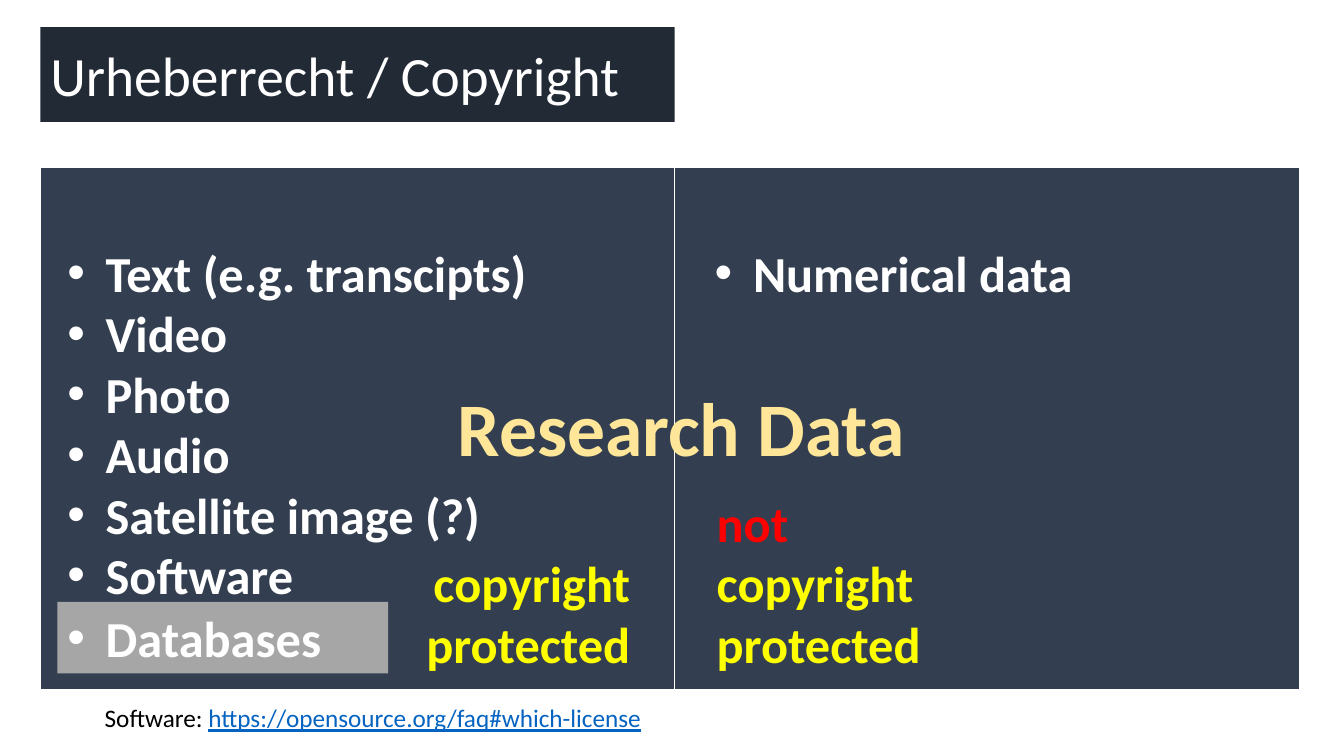
from lxml import etree
from pptx import Presentation
from pptx.dml.color import RGBColor
from pptx.enum.shapes import MSO_SHAPE
from pptx.enum.text import MSO_ANCHOR, PP_ALIGN
from pptx.oxml.ns import qn
from pptx.util import Inches, Pt

RECTANGLE = MSO_SHAPE.RECTANGLE
TOP, MIDDLE = MSO_ANCHOR.TOP, MSO_ANCHOR.MIDDLE
LEFT, RIGHT = PP_ALIGN.LEFT, PP_ALIGN.RIGHT
FONT = "Calibri"
COLORS = {
    "white": "FFFFFF", "panel": "333F50", "title": "222A35", "grey": "A6A6A6",
    "yellow": "FFFF00", "red": "FF0000", "gold": "FFE699", "black": "000000",
    "link": "0563C1",
}
PROTECTED_KINDS = ["Text (e.g. transcipts)", "Video", "Photo", "Audio",
                   "Satellite image (?)", "Software"]


def rgb(name):
    """Return the named colour."""
    return RGBColor.from_string(COLORS[name])


def add_block(slide, box, fill, border=None):
    """Draw a filled rectangle in the box, with an optional border."""
    block = slide.shapes.add_shape(RECTANGLE, *map(Inches, box))
    block.shadow.inherit = False
    block.fill.solid()
    block.fill.fore_color.rgb = rgb(fill)
    if border:
        block.line.color.rgb = rgb(border)
        block.line.width = Pt(1)
    else:
        block.line.fill.background()
    return block


def add_label(slide, box):
    """Add an empty text box in the box."""
    return slide.shapes.add_textbox(*map(Inches, box))


def style_run(run, size, color, bold=True):
    """Set the font of a run."""
    run.font.name = FONT
    run.font.size = Pt(size)
    run.font.bold = bold
    run.font.color.rgb = rgb(color)


def outline_run(run):
    """Give the letters of a run a thin outline in the panel colour."""
    outline = etree.Element(qn("a:ln"), w=str(Pt(1)))
    fill = etree.SubElement(outline, qn("a:solidFill"))
    etree.SubElement(fill, qn("a:srgbClr"), val=COLORS["panel"])
    run.font._element.insert(0, outline)


def add_bullet(paragraph):
    """Give a paragraph a round bullet and a hanging indent."""
    properties = paragraph._p.get_or_add_pPr()
    properties.set("marL", str(Inches(0.38)))
    properties.set("indent", str(-Inches(0.38)))
    etree.SubElement(properties, qn("a:buFont"), typeface="Arial")
    etree.SubElement(properties, qn("a:buChar"), char="•")


def write_lines(shape, lines, colors, size=36, bold=True, align=LEFT,
                anchor=TOP, bullets=False, outlined=False):
    """Write one paragraph per line into the shape."""
    frame = shape.text_frame
    frame.word_wrap = True
    frame.vertical_anchor = anchor
    frame.text = "\n".join(lines)
    for paragraph, color in zip(frame.paragraphs, colors):
        paragraph.alignment = align
        if bullets:
            add_bullet(paragraph)
        for run in paragraph.runs:
            style_run(run, size, color, bold)
            if outlined:
                outline_run(run)


def add_title(slide, box):
    """Build the title bar."""
    bar = add_block(slide, box, "title")
    write_lines(bar, ["Urheberrecht / Copyright"], ["white"], size=39.6,
                bold=False, anchor=MIDDLE)


def add_unprotected_panel(slide, box):
    """Build the panel of data without copyright."""
    left, top, _, _ = box
    add_block(slide, box, "panel", "white")
    verdict = add_label(slide, (left + 0.33, top + 3.17, 2.49, 1.92))
    write_lines(verdict, ["not", "copyright", "protected"],
                ["red", "yellow", "yellow"], outlined=True)
    kinds = add_label(slide, (left + 0.31, top + 0.69, 4.45, 0.71))
    write_lines(kinds, ["Numerical data"], ["white"], bullets=True)


def add_protected_panel(slide, box):
    """Build the panel of data under copyright."""
    left, top, width, _ = box
    add_block(slide, box, "panel", "white")
    verdict = add_label(slide, (left + width - 2.59, top + 3.77, 2.25, 1.31))
    write_lines(verdict, ["copyright", "protected"], ["yellow"] * 2,
                align=RIGHT, outlined=True)
    kinds = add_label(slide, (left + 0.17, top + 0.69, 5.77, 4.21))
    write_lines(kinds, PROTECTED_KINDS, ["white"] * len(PROTECTED_KINDS),
                bullets=True)
    databases = add_block(slide, (left + 0.17, top + 4.31, 3.28, 0.71), "grey")
    write_lines(databases, ["Databases"], ["white"], bullets=True)


def add_topic(slide, box):
    """Write the topic across both panels."""
    write_lines(add_label(slide, box), ["Research Data"], ["gold"], size=54)


def add_source(slide, box):
    """Write the source line with its underlined address."""
    source = add_label(slide, box)
    write_lines(source, ["Software: "], ["black"], size=18, bold=False)
    address = source.text_frame.paragraphs[0].add_run()
    address.text = "https://opensource.org/faq#which-license"
    style_run(address, 18, "link", bold=False)
    address.font.underline = True


def main():
    """Build the slide and save it."""
    presentation = Presentation()
    presentation.slide_width = Inches(13.33)
    presentation.slide_height = Inches(7.5)
    slide = presentation.slides.add_slide(presentation.slide_layouts[6])
    add_unprotected_panel(slide, (6.68, 1.66, 6.21, 5.18))
    add_protected_panel(slide, (0.4, 1.66, 6.29, 5.18))
    add_title(slide, (0.4, 0.27, 6.29, 0.94))
    add_source(slide, (0.94, 6.92, 6.67, 0.4))
    add_topic(slide, (4.44, 3.73, 4.82, 1.01))
    presentation.save("out.pptx")


if __name__ == "__main__":
    main()
